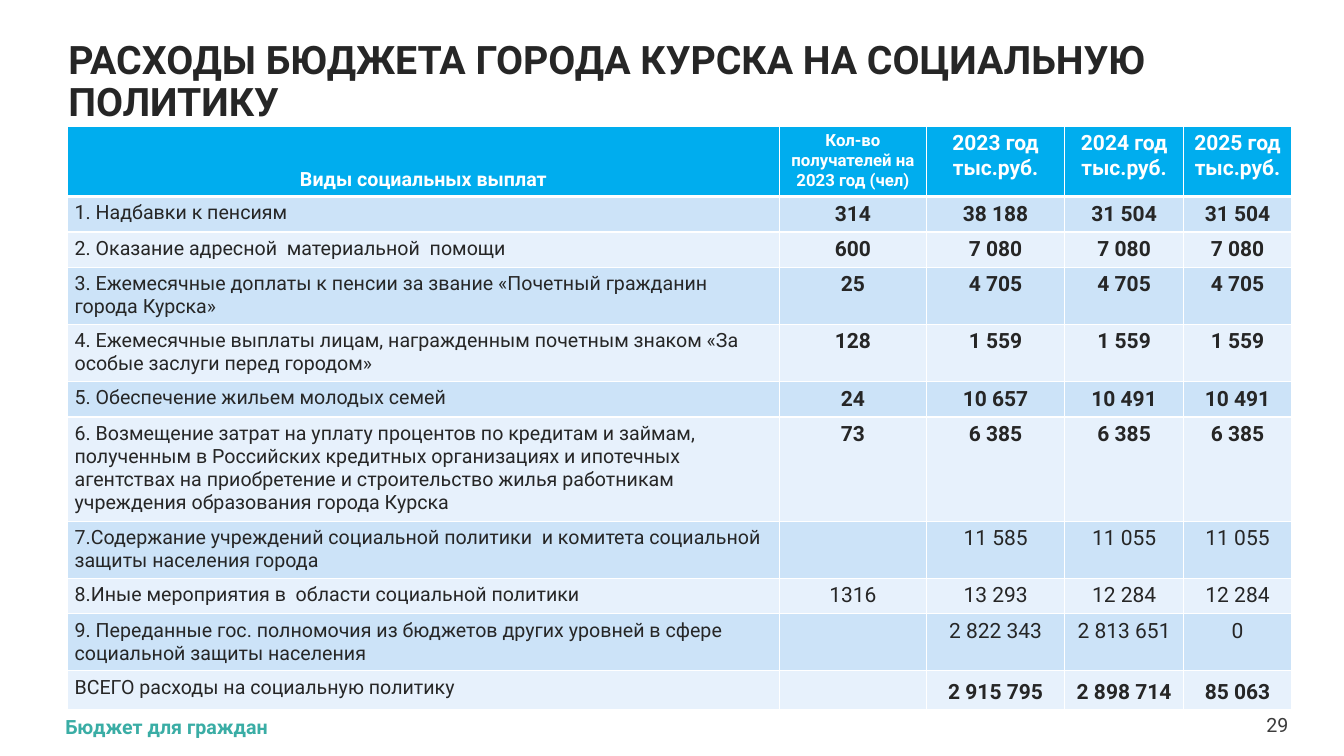
from lxml import etree
from pptx import Presentation
from pptx.dml.color import RGBColor
from pptx.enum.text import MSO_ANCHOR, PP_ALIGN
from pptx.oxml.ns import qn
from pptx.util import Inches, Pt

LEFT, CENTER, RIGHT = PP_ALIGN.LEFT, PP_ALIGN.CENTER, PP_ALIGN.RIGHT
TOP, MIDDLE, BOTTOM = MSO_ANCHOR.TOP, MSO_ANCHOR.MIDDLE, MSO_ANCHOR.BOTTOM

FONT = "Roboto"
COLORS = {
    "white": "FFFFFF",
    "header": "00ADEE",
    "odd_row": "CCE3F8",
    "even_row": "E7F1FC",
    "text": "262626",
    "footer": "3AADA5",
    "number": "3C3C3C",
}
TITLE = "РАСХОДЫ БЮДЖЕТА ГОРОДА КУРСКА НА СОЦИАЛЬНУЮ ПОЛИТИКУ"
FOOTER = "Бюджет для граждан"
PAGE_NUMBER = "29"

HEADERS = [
    ("Виды социальных выплат", 14, BOTTOM),
    ("Кол-во получателей на 2023 год (чел)", 12, TOP),
    ("2023 год\nтыс.руб.", 15, TOP),
    ("2024 год\nтыс.руб.", 15, TOP),
    ("2025 год\nтыс.руб.", 15, TOP),
]
PAYMENTS = [
    ("1. Надбавки к пенсиям", "314", "38 188", "31 504", "31 504"),
    ("2. Оказание адресной  материальной  помощи", "600", "7 080", "7 080", "7 080"),
    ("3. Ежемесячные доплаты к пенсии за звание «Почетный гражданин города Курска»",
     "25", "4 705", "4 705", "4 705"),
    ("4. Ежемесячные выплаты лицам, награжденным почетным знаком «За особые заслуги перед городом»",
     "128", "1 559", "1 559", "1 559"),
    ("5. Обеспечение жильем молодых семей", "24", "10 657", "10 491", "10 491"),
    ("6. Возмещение затрат на уплату процентов по кредитам и займам, полученным в Российских "
     "кредитных организациях и ипотечных агентствах на приобретение и строительство жилья "
     "работникам учреждения образования города Курска", "73", "6 385", "6 385", "6 385"),
    ("7.Содержание учреждений социальной политики  и комитета социальной защиты населения города",
     "", "11 585", "11 055", "11 055"),
    ("8.Иные мероприятия в  области социальной политики", "1316", "13 293", "12 284", "12 284"),
    ("9. Переданные гос. полномочия из бюджетов других уровней в сфере социальной защиты населения",
     "", "2 822 343", "2 813 651", "0"),
    ("ВСЕГО расходы на социальную политику", "", "2 915 795", "2 898 714", "85 063"),
]
REGULAR_ROWS = (7, 8, 9)
TOTAL_ROW = len(PAYMENTS)
COLUMN_WIDTHS = [7.06, 1.46, 1.37, 1.18, 1.07]
ROW_HEIGHTS = [0.68, 0.35, 0.35, 0.56, 0.56, 0.35, 1.02, 0.56, 0.35, 0.56, 0.38]
TABLE_LEFT, TABLE_TOP = 0.67, 1.25


def write_text(frame, text, size, color, bold=False, align=LEFT, line_spacing=None):
    frame.word_wrap = True
    for index, line in enumerate(text.split("\n")):
        paragraph = frame.add_paragraph() if index else frame.paragraphs[0]
        paragraph.alignment = align
        if line_spacing:
            paragraph.line_spacing = line_spacing
        if line:
            paragraph.add_run().text = line
        for font in [paragraph.font] + [run.font for run in paragraph.runs]:
            font.name = FONT
            font.size = Pt(size)
            font.bold = bold
            font.color.rgb = RGBColor.from_string(COLORS[color])


def add_text_box(slide, box, text, margins=(0, 0), anchor=TOP, **text_format):
    frame = slide.shapes.add_textbox(*map(Inches, box)).text_frame
    frame.margin_left = frame.margin_right = Inches(margins[0])
    frame.margin_top = frame.margin_bottom = Inches(margins[1])
    frame.vertical_anchor = anchor
    write_text(frame, text, **text_format)


def set_borders(cell, top, bottom):
    properties = cell._tc.get_or_add_tcPr()
    widths = {"a:lnL": 1, "a:lnR": 1, "a:lnT": top, "a:lnB": bottom}
    for position, (tag, width) in enumerate(widths.items()):
        line = etree.Element(qn(tag), w=str(Pt(width)))
        fill = etree.SubElement(line, qn("a:solidFill"))
        etree.SubElement(fill, qn("a:srgbClr"), val=COLORS["white"])
        properties.insert(position, line)


def style_cell(cell, fill, anchor, top=1, bottom=1):
    cell.margin_left = cell.margin_right = Inches(0.07)
    cell.margin_top = cell.margin_bottom = Inches(0.05)
    cell.vertical_anchor = anchor
    cell.fill.solid()
    cell.fill.fore_color.rgb = RGBColor.from_string(COLORS[fill])
    set_borders(cell, top, bottom)


def add_payments_table(slide):
    table = slide.shapes.add_table(
        len(ROW_HEIGHTS), len(COLUMN_WIDTHS), Inches(TABLE_LEFT), Inches(TABLE_TOP),
        Inches(sum(COLUMN_WIDTHS)), Inches(sum(ROW_HEIGHTS))).table
    for column, width in zip(table.columns, COLUMN_WIDTHS):
        column.width = Inches(width)
    for row, height in zip(table.rows, ROW_HEIGHTS):
        row.height = Inches(height)

    for column, (text, size, anchor) in enumerate(HEADERS):
        cell = table.cell(0, column)
        style_cell(cell, "header", anchor, bottom=3)
        write_text(cell.text_frame, text, size, "white", bold=True, align=CENTER)

    for row, values in enumerate(PAYMENTS, start=1):
        for column, text in enumerate(values):
            cell = table.cell(row, column)
            is_value = column > 0
            style_cell(cell, "odd_row" if row % 2 else "even_row", TOP, top=3 if row == 1 else 1)
            write_text(cell.text_frame, text, 15 if is_value else 14, "text",
                       bold=is_value and row not in REGULAR_ROWS,
                       align=CENTER if is_value else LEFT,
                       line_spacing=1.15 if is_value and row == TOTAL_ROW else None)


def main():
    """Build the slide on the city's social policy spending."""
    presentation = Presentation()
    presentation.slide_width, presentation.slide_height = Inches(13.33), Inches(7.5)
    slide = presentation.slides.add_slide(presentation.slide_layouts[6])
    add_text_box(slide, (0.58, 0.44, 11.88, 0.76), TITLE, margins=(0.1, 0.05), anchor=MIDDLE,
                 size=28, color="text", bold=True, line_spacing=0.9)
    add_payments_table(slide)
    add_text_box(slide, (0.65, 7.09, 11.8, 0.24), FOOTER, size=14, color="footer", bold=True)
    add_text_box(slide, (12.53, 7.07, 0.25, 0.24), PAGE_NUMBER, anchor=MIDDLE,
                 size=14, color="number", align=RIGHT)
    presentation.save("out.pptx")


if __name__ == "__main__":
    main()
